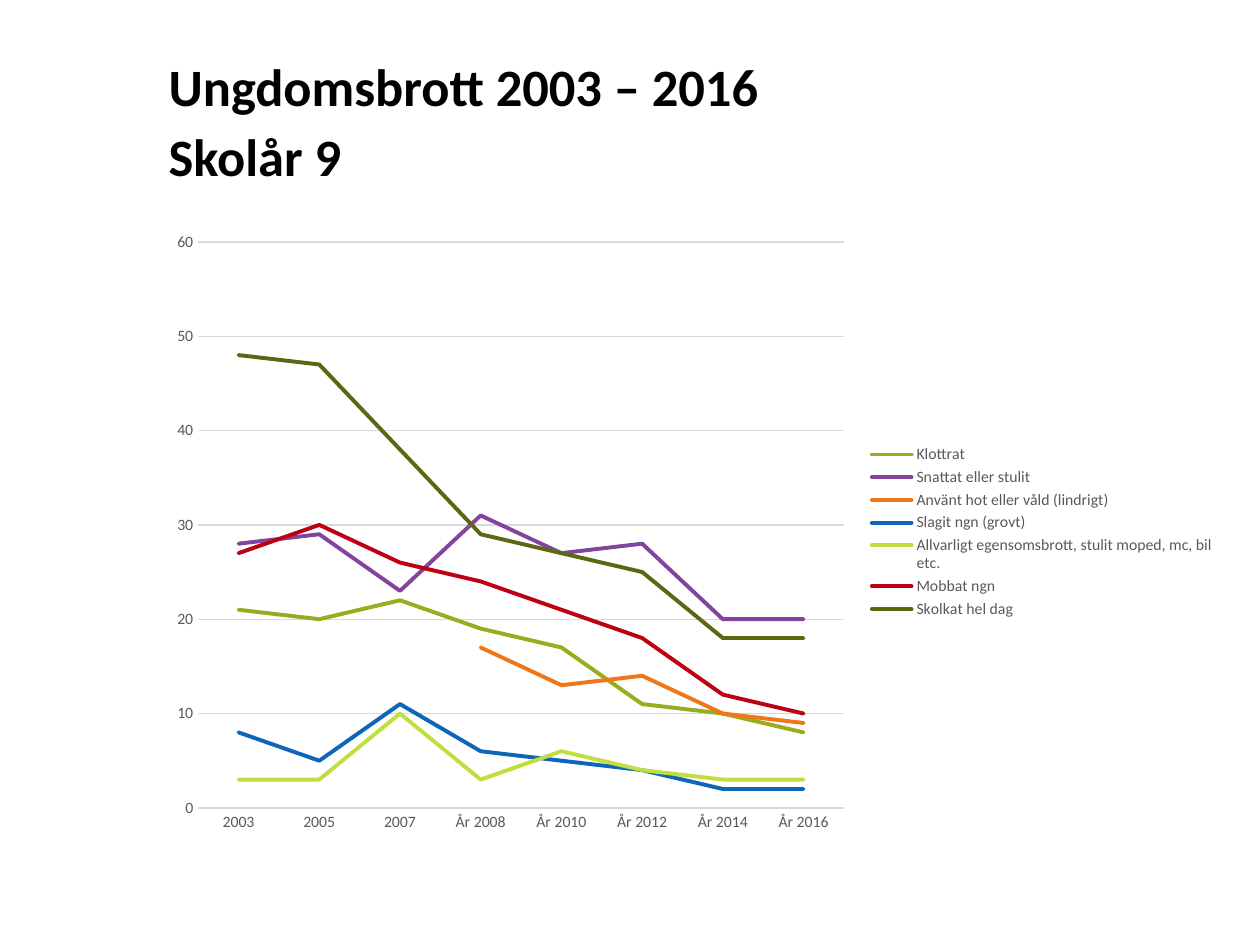
from typing import NamedTuple, Optional

from lxml import etree
from pptx import Presentation
from pptx.chart.data import CategoryChartData
from pptx.dml.color import RGBColor
from pptx.enum.chart import XL_CHART_TYPE, XL_LEGEND_POSITION, XL_MARKER_STYLE, XL_TICK_MARK
from pptx.enum.text import MSO_ANCHOR
from pptx.oxml.ns import qn
from pptx.util import Pt

LINE_CHART = XL_CHART_TYPE.LINE
LEGEND_RIGHT = XL_LEGEND_POSITION.RIGHT
NO_MARKER = XL_MARKER_STYLE.NONE
NO_TICK = XL_TICK_MARK.NONE
MIDDLE = MSO_ANCHOR.MIDDLE

FONT = "Calibri"
COLORS = {
    "title": "000000",
    "label": "595959",
    "grid": "D9D9D9",
    "olive": "97AC1E",
    "purple": "83449D",
    "orange": "F07717",
    "blue": "0F65B8",
    "lime": "C0DE3D",
    "red": "BD0012",
    "moss": "5B6712",
}


class Box(NamedTuple):
    """A rectangle in points."""
    left: float
    top: float
    width: float
    height: float


class Offence(NamedTuple):
    name: str
    color: str
    percentages: tuple[Optional[int], ...]


TITLE_BOX = Box(89.28, 21.6, 611.28, 90)
CHART_BOX = Box(89.28, 126, 611.28, 356.4)
# Both boxes below are measured from the chart's top left corner.
PLOT_BOX = Box(24, 12.25, 369, 323.5)
LEGEND_BOX = Box(404, 126, 204, 104)

YEARS = ("2003", "2005", "2007", "År 2008", "År 2010", "År 2012", "År 2014", "År 2016")
OFFENCES = (
    Offence("Klottrat", "olive", (21, 20, 22, 19, 17, 11, 10, 8)),
    Offence("Snattat eller stulit", "purple", (28, 29, 23, 31, 27, 28, 20, 20)),
    Offence("Använt hot eller våld (lindrigt)", "orange",
            (None, None, None, 17, 13, 14, 10, 9)),
    Offence("Slagit ngn (grovt)", "blue", (8, 5, 11, 6, 5, 4, 2, 2)),
    Offence("Allvarligt egensomsbrott, stulit moped, mc, bil etc.", "lime",
            (3, 3, 10, 3, 6, 4, 3, 3)),
    Offence("Mobbat ngn", "red", (27, 30, 26, 24, 21, 18, 12, 10)),
    Offence("Skolkat hel dag", "moss", (48, 47, 38, 29, 27, 25, 18, 18)),
)


def in_points(box: Box) -> list[Pt]:
    return [Pt(length) for length in box]


def style_font(font, size: float, color: str, bold: bool = False) -> None:
    font.name = FONT
    font.size = Pt(size)
    font.bold = bold
    font.color.rgb = RGBColor.from_string(COLORS[color])


def style_line(line, width: float, color: str) -> None:
    line.width = Pt(width)
    line.color.rgb = RGBColor.from_string(COLORS[color])


def place_in_chart(parent, index: int, box: Box, inner: bool = False) -> None:
    """Give the plot area or legend a manual layout, as fractions of the chart's size."""
    for old_layout in parent.findall(qn("c:layout")):
        parent.remove(old_layout)
    layout = etree.Element(qn("c:layout"))
    manual = etree.SubElement(layout, qn("c:manualLayout"))
    settings = [("layoutTarget", "inner")] if inner else []
    settings += [("xMode", "edge"), ("yMode", "edge")]
    sizes = (CHART_BOX.width, CHART_BOX.height) * 2
    settings += [(key, str(length / size)) for key, length, size in zip("xywh", box, sizes)]
    for tag, value in settings:
        etree.SubElement(manual, qn(f"c:{tag}")).set("val", value)
    parent.insert(index, layout)


def add_title(slide) -> None:
    text_frame = slide.shapes.add_textbox(*in_points(TITLE_BOX)).text_frame
    text_frame.word_wrap = True
    text_frame.vertical_anchor = MIDDLE
    paragraph = text_frame.paragraphs[0]
    paragraph.text = "Ungdomsbrott 2003 – 2016\nSkolår 9"
    paragraph.line_spacing = Pt(40)
    for run in paragraph.runs:
        style_font(run.font, 30, "title", bold=True)


def style_axes(chart) -> None:
    for axis in (chart.category_axis, chart.value_axis):
        axis.major_tick_mark = NO_TICK
        axis.minor_tick_mark = NO_TICK
        style_font(axis.tick_labels.font, 9, "label")
    style_line(chart.category_axis.format.line, 0.75, "grid")
    value_axis = chart.value_axis
    value_axis.minimum_scale, value_axis.maximum_scale, value_axis.major_unit = 0, 60, 10
    value_axis.format.line.fill.background()
    style_line(value_axis.major_gridlines.format.line, 0.75, "grid")


def add_offence_chart(slide) -> None:
    data = CategoryChartData(number_format="General")
    data.categories = YEARS
    for offence in OFFENCES:
        data.add_series(offence.name, offence.percentages)
    chart = slide.shapes.add_chart(LINE_CHART, *in_points(CHART_BOX), data).chart
    chart.has_title = False
    style_font(chart.font, 10, "title")
    style_axes(chart)

    plot = chart.plots[0]
    plot.vary_by_categories = False
    for series, offence in zip(plot.series, OFFENCES):
        series.smooth = False
        series.marker.style = NO_MARKER
        style_line(series.format.line, 2.25, offence.color)
    chart_space = chart.element
    for line in chart_space.xpath(".//c:ser/c:spPr/a:ln"):
        line.set("cap", "rnd")

    chart.has_legend = True
    chart.legend.position = LEGEND_RIGHT
    chart.legend.include_in_layout = False
    style_font(chart.legend.font, 9, "label")
    place_in_chart(chart_space.xpath(".//c:plotArea")[0], 0, PLOT_BOX, inner=True)
    place_in_chart(chart_space.xpath(".//c:legend")[0], 1, LEGEND_BOX)


def main() -> None:
    presentation = Presentation()
    presentation.slide_width = Pt(720)
    presentation.slide_height = Pt(540)
    slide = presentation.slides.add_slide(presentation.slide_layouts[6])
    add_title(slide)
    add_offence_chart(slide)
    presentation.save("out.pptx")


if __name__ == "__main__":
    main()
